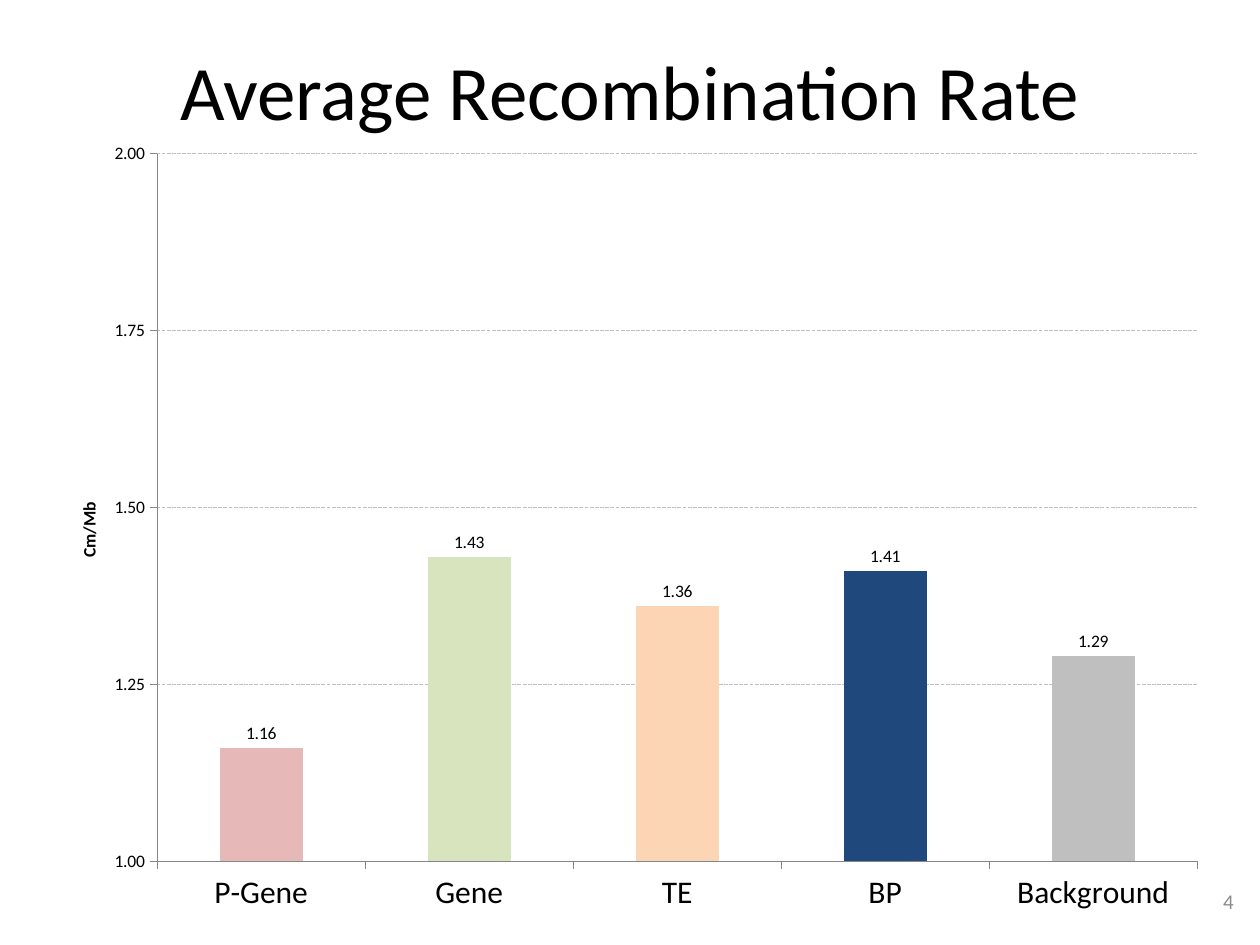
import pptx
import pptx.chart.data
import pptx.dml.color
import pptx.enum.chart
import pptx.enum.dml
import pptx.enum.text
import pptx.oxml
import pptx.util

Inches, Pt = pptx.util.Inches, pptx.util.Pt
RGBColor = pptx.dml.color.RGBColor
Align = pptx.enum.text.PP_ALIGN
Enum = pptx.enum.chart

FACE = "Calibri"
BLACK = RGBColor(0x00, 0x00, 0x00)
MUTED = RGBColor(0x8C, 0x8C, 0x8C)
AXIS = RGBColor(0x86, 0x86, 0x86)
GRID = RGBColor(0xBF, 0xBF, 0xBF)

RATES = [
    ("P-Gene", 1.16, RGBColor(0xE6, 0xB9, 0xB8)),
    ("Gene", 1.43, RGBColor(0xD7, 0xE4, 0xBD)),
    ("TE", 1.36, RGBColor(0xFC, 0xD5, 0xB5)),
    ("BP", 1.41, RGBColor(0x1F, 0x49, 0x7D)),
    ("Background", 1.29, RGBColor(0xBF, 0xBF, 0xBF)),
]
TEXTS = [
    ("Average Recombination Rate", (0.5, 0.09, 9, 1.25), 44, BLACK, Align.CENTER),
    ("4", (7.56, 6.95, 2.33, 0.4), 12, MUTED, Align.RIGHT),
]
CHART = (0.31, 1.03, 9.38, 6.38)
PLOT = {"x": 0.1, "y": 0.03, "w": 0.88, "h": 0.88}
LABEL = {"x": 0.03, "y": 0.46}


def style(font, size, color=BLACK, bold=False):
    font.name = FACE
    font.size = Pt(size)
    font.bold = bold
    font.color.rgb = color


def add_text(slide, text, place, size, color, align):
    box = slide.shapes.add_textbox(*map(Inches, place))
    frame = box.text_frame
    frame.word_wrap = True
    frame.vertical_anchor = pptx.enum.text.MSO_ANCHOR.MIDDLE
    line = frame.paragraphs[0]
    line.text = text
    line.alignment = align
    style(line.font, size, color)


def set_layout(node, index, spots, inner=False):
    for old in node.xpath("./c:layout"):
        node.remove(old)
    target = '<c:layoutTarget val="inner"/>' if inner else ""
    modes = "".join(f'<c:{key}Mode val="edge"/>' for key in "xy")
    sizes = "".join(f'<c:{key} val="{val}"/>' for key, val in spots.items())
    node.insert(index, pptx.oxml.parse_xml(
        '<c:layout xmlns:c="http://schemas.openxmlformats.org/drawingml/2006/chart">'
        f"<c:manualLayout>{target}{modes}{sizes}</c:manualLayout></c:layout>"))


def add_rates(slide):
    names, vals, fills = zip(*RATES)
    data = pptx.chart.data.CategoryChartData(number_format="0.00")
    data.categories = names
    data.add_series("Series 1", vals)
    kind = Enum.XL_CHART_TYPE.COLUMN_CLUSTERED
    chart = slide.shapes.add_chart(kind, *map(Inches, CHART), data).chart
    chart.has_legend = False
    chart.has_title = False
    style(chart.font, 10)
    set_layout(chart.element.xpath(".//c:plotArea")[0], 0, PLOT, True)

    for axis, size in ((chart.category_axis, 18), (chart.value_axis, 10)):
        style(axis.tick_labels.font, size)
        axis.major_tick_mark = Enum.XL_TICK_MARK.OUTSIDE
        axis.minor_tick_mark = Enum.XL_TICK_MARK.NONE
        axis.format.line.color.rgb = AXIS
        axis.format.line.width = Pt(0.75)

    rate = chart.value_axis
    rate.minimum_scale, rate.maximum_scale, rate.major_unit = 1, 2, 0.25
    rate.tick_labels.number_format = "0.00"
    rate.tick_labels.number_format_is_linked = False
    grid = rate.major_gridlines.format.line
    grid.color.rgb = GRID
    grid.width = Pt(0.75)
    grid.dash_style = pptx.enum.dml.MSO_LINE.SQUARE_DOT
    title = rate.axis_title
    line = title.text_frame.paragraphs[0]
    line.text = "Cm/Mb"
    style(line.font, 10, bold=True)
    set_layout(title.element, 1, LABEL)

    plot = chart.plots[0]
    plot.gap_width = 150
    plot.vary_by_categories = False
    plot.has_data_labels = True
    tags = plot.data_labels
    tags.show_value = True
    tags.position = Enum.XL_LABEL_POSITION.OUTSIDE_END
    tags.number_format = "0.00"
    tags.number_format_is_linked = False
    style(tags.font, 10)
    for i, color in enumerate(fills):
        fill = plot.series[0].points[i].format.fill
        fill.solid()
        fill.fore_color.rgb = color


def main():
    deck = pptx.Presentation()
    deck.slide_width, deck.slide_height = Inches(10), Inches(7.5)
    slide = deck.slides.add_slide(deck.slide_layouts[6])
    add_rates(slide)
    for item in TEXTS:
        add_text(slide, *item)
    deck.save("out.pptx")


if __name__ == "__main__":
    main()
